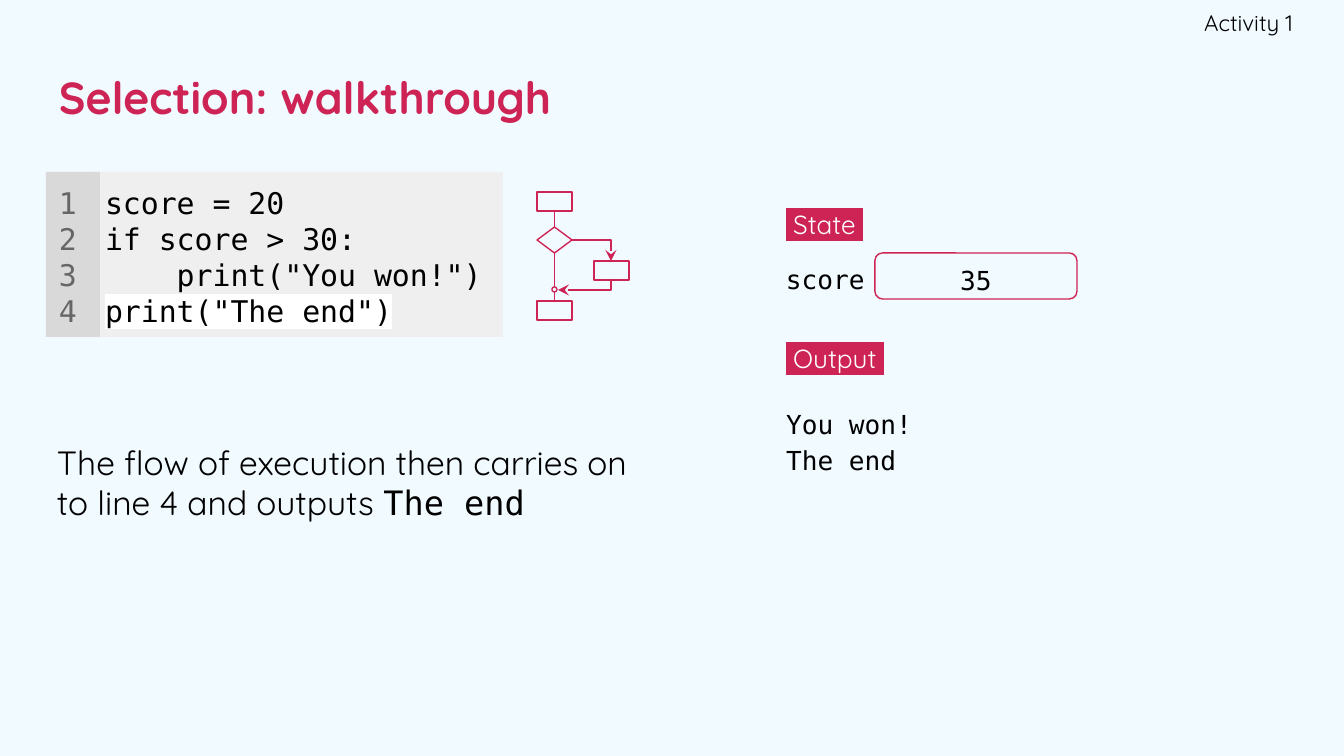
from lxml import etree
from pptx import Presentation
from pptx.dml.color import RGBColor as RGB
from pptx.enum.shapes import MSO_CONNECTOR as Link, MSO_SHAPE as Kind
from pptx.enum.text import MSO_ANCHOR as Anchor, PP_ALIGN as Align
from pptx.oxml.ns import qn
from pptx.util import Emu, Pt

COLORS = {"back": "F1FAFF", "red": "CD2355", "black": "000000", "white": "FFFFFF",
          "code": "EFEFEF", "bar": "D9D9D9", "gray": "666666"}
MONO, SANS = "DejaVu Sans Mono", "Quicksand"


def px(*nums):
    return [Emu(round(n * 914400 / 134.4)) for n in nums]


def write(shape, lines, font=SANS, size=14, color="black", bold=False, mark=None,
          align=Align.LEFT, anchor=Anchor.TOP, space=None, pad=(13, 13, 13, 13)):
    frame = shape.text_frame
    frame.word_wrap = True
    frame.vertical_anchor = anchor
    frame.margin_left, frame.margin_top, frame.margin_right, frame.margin_bottom = px(*pad)
    for i, line in enumerate(lines):
        para = frame.add_paragraph() if i else frame.paragraphs[0]
        para.alignment = align
        if space:
            para.line_spacing = space
        for part in line if isinstance(line, list) else [line]:
            words, style = part if isinstance(part, tuple) else (part, {})
            run = para.add_run()
            run.text = words
            run.font.name = style.get("font", font)
            run.font.size = Pt(size)
            run.font.bold = bold
            run.font.color.rgb = RGB.from_string(COLORS[color])
            tint = style.get("mark", mark)
            if tint:
                high = etree.Element(qn("a:highlight"))
                etree.SubElement(high, qn("a:srgbClr"), val=COLORS[tint])
                run.font._element.find(qn("a:solidFill")).addnext(high)


deck = Presentation()
deck.slide_width, deck.slide_height = px(1344, 756)
slide = deck.slides.add_slide(deck.slide_layouts[6])
slide.background.fill.solid()
slide.background.fill.fore_color.rgb = RGB.from_string(COLORS["back"])
shapes = slide.shapes

title = shapes.add_textbox(*px(46, 46, 1253, 102))
write(title, ["Selection: walkthrough"], size=24, color="red", bold=True, anchor=Anchor.MIDDLE)
label = shapes.add_textbox(*px(1005, 0, 288, 46))
write(label, ["Activity 1"], size=12, align=Align.RIGHT, anchor=Anchor.MIDDLE,
      pad=(13, 13, 0, 13))

code = ["score = 20", "if score > 30:", '    print("You won!")',
        [('print("The end")', {"mark": "white"})]]
count = [str(n + 1) for n in range(len(code))]
for left, wide, fill, lines, color in [(92, 411, "code", code, "black"),
                                       (46, 54, "bar", count, "gray")]:
    panel = shapes.add_shape(Kind.RECTANGLE, *px(left, 172, wide, 165))
    panel.shadow.inherit = False
    panel.fill.solid()
    panel.fill.fore_color.rgb = RGB.from_string(COLORS[fill])
    panel.line.fill.background()
    write(panel, lines, font=MONO, size=16, color=color)

nodes = {}
for name, kind, box, width in [
    ("start", Kind.RECTANGLE, (537, 192, 35, 19), 0.75),
    ("test", Kind.FLOWCHART_DECISION, (537, 227, 35, 26), 0.75),
    ("branch", Kind.RECTANGLE, (594, 261, 35, 19), 0.75),
    ("end", Kind.RECTANGLE, (537, 301, 35, 19), 1.5),
    ("value", Kind.ROUNDED_RECTANGLE, (875, 253, 202, 46), 0.75),
]:
    node = shapes.add_shape(kind, *px(*box))
    node.shadow.inherit = False
    node.fill.background()
    node.line.color.rgb = RGB.from_string(COLORS["red"])
    node.line.width = Pt(width)
    nodes[name] = node

links = []
for top, low in [("start", "test"), ("test", "end")]:
    link = shapes.add_connector(Link.STRAIGHT, *px(0, 0, 0, 0))
    link.begin_connect(nodes[top], 2)
    link.end_connect(nodes[low], 0)
    links.append(link)
for ends, turn in [((572, 240, 611, 261), 0), ((579, 258, 590, 311), 90)]:
    link = shapes.add_connector(Link.ELBOW, *px(*ends))
    props = link._element.spPr
    props.find(qn("a:prstGeom")).set("prst", "bentConnector2")
    props.find(qn("a:xfrm")).set("rot", str(turn * 60000))
    etree.SubElement(link.line._get_or_add_ln(), qn("a:tailEnd"), type="stealth")
    links.append(link)
for link in links:
    link.line.color.rgb = RGB.from_string(COLORS["red"])
    link.line.width = Pt(0.75)
    etree.SubElement(link._element.spPr, qn("a:effectLst"))

merge = shapes.add_shape(Kind.OVAL, *px(552, 287, 5, 5))
merge.shadow.inherit = False
merge.fill.solid()
merge.fill.fore_color.rgb = RGB.from_string(COLORS["back"])
merge.line.color.rgb = RGB.from_string(COLORS["red"])
merge.line.width = Pt(0.75)

write(nodes["value"], ["35"], font=MONO, align=Align.CENTER, anchor=Anchor.MIDDLE,
      space=1.15, pad=(13, 3, 13, 0))
for box, lines in [((773, 246, 180, 54), ["score"]),
                   ((773, 391, 524, 227), ["You won!", "The end"])]:
    write(shapes.add_textbox(*px(*box)), lines, font=MONO, space=1.15)
for box, words in [((773, 191, 313, 54), " State "), ((773, 325, 141, 54), " Output ")]:
    write(shapes.add_textbox(*px(*box)), [words], color="white", mark="red",
          space=1.14, pad=(13, 13, 8, 13))

note = shapes.add_textbox(*px(44, 429, 614, 204))
write(note, [["The flow of execution then carries on to line 4 and outputs ",
              ("The end", {"font": MONO})]], size=18)

deck.save("out.pptx")
